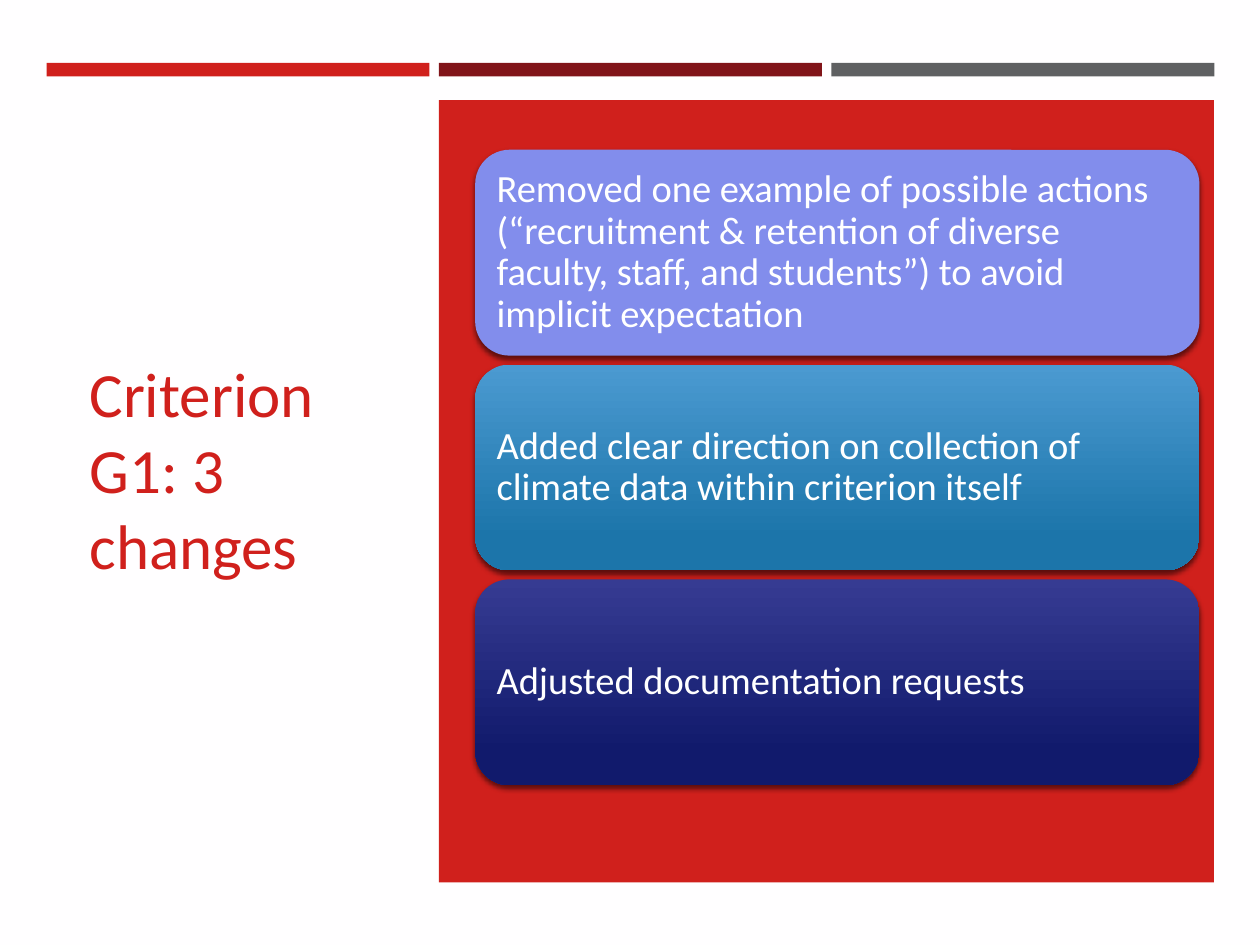
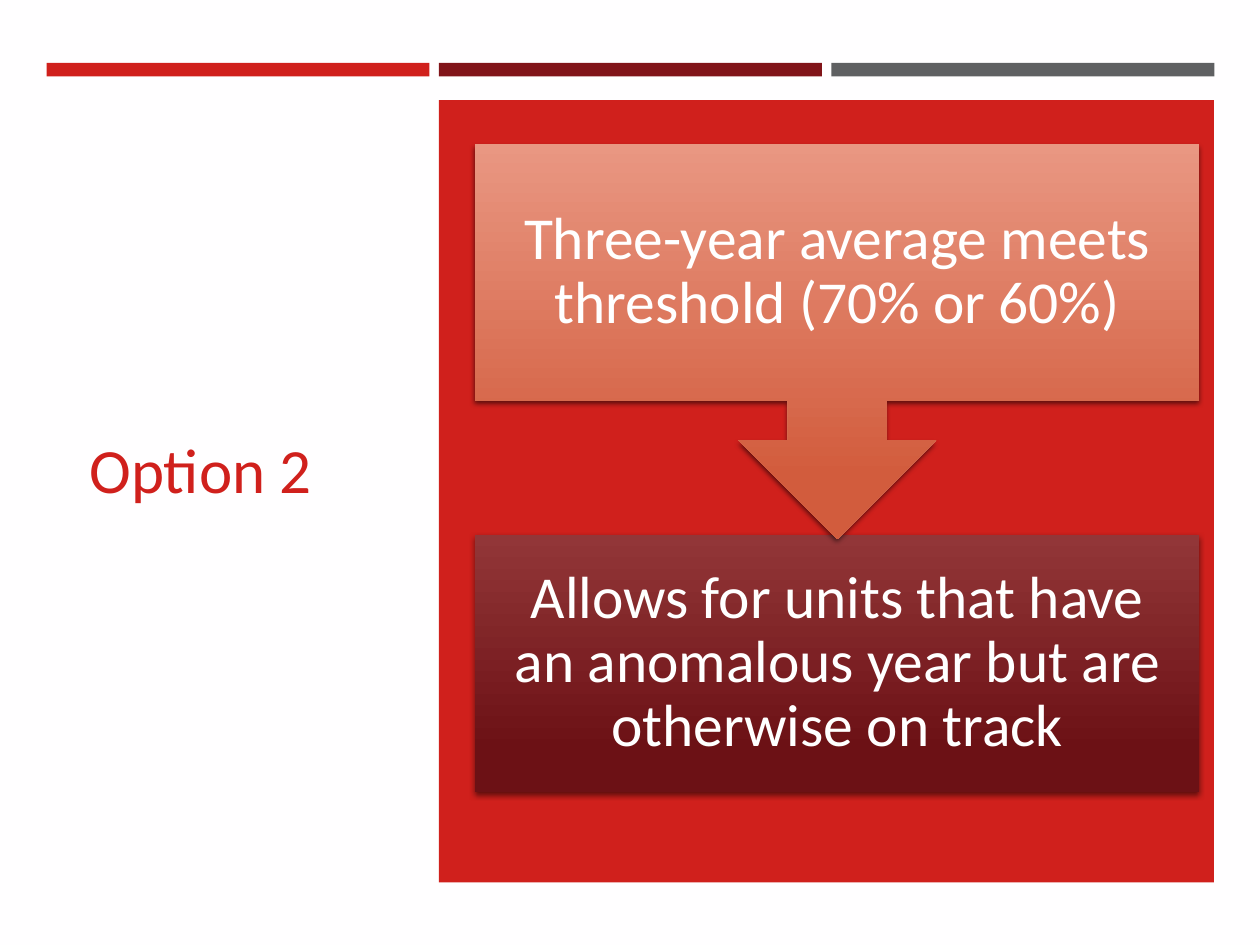
from lxml import etree
from pptx import Presentation
from pptx import util as u
from pptx.dml.color import RGBColor
from pptx.enum import shapes, text
from pptx.oxml import ns

FONT = "Calibri"
RED, MAROON, GREY = "D0201C", "811419", "5F6062"
PAPER, WHITE = "FFFEFF", "FFFFFF"

BAR_LEFT, BAR_TOP, BAR_WIDTH, BAR_HEIGHT, BAR_STEP = 0.94, 1.27, 7.72, 0.27, 7.91
PANEL = (BAR_LEFT + BAR_STEP, 2.02, 15.62, 15.77)
TITLE = (1.55, 2.9, 6.35, 13.08)
CONTENT_LEFT, CONTENT_WIDTH = 9.58, 14.6


def color(hex_code):
    return RGBColor.from_string(hex_code)


def write(shape, words, size, hex_code=WHITE, align=text.PP_ALIGN.LEFT,
          spacing=None, inset=None):
    frame = shape.text_frame
    frame.word_wrap = True
    frame.auto_size = text.MSO_AUTO_SIZE.NONE
    frame.vertical_anchor = text.MSO_ANCHOR.MIDDLE
    if inset is not None:
        frame.margin_left = frame.margin_right = u.Cm(inset)
        frame.margin_top = frame.margin_bottom = u.Cm(inset)
    para = frame.paragraphs[0]
    para.alignment = align
    para.line_spacing = spacing
    span = para.add_run()
    span.text = words
    span.font.name = FONT
    span.font.size = u.Pt(size)
    span.font.color.rgb = color(hex_code)


def add_block(page, kind, place, *fills):
    """Add a borderless shape; two fills make a top-to-bottom gradient."""
    block = page.shapes.add_shape(kind, *map(u.Cm, place))
    block.shadow.inherit = False
    block.line.fill.background()
    if len(fills) == 1:
        block.fill.solid()
        block.fill.fore_color.rgb = color(fills[0])
    else:
        block.fill.gradient()
        block.fill.gradient_angle = 270
        for stop, position, hex_code in zip(block.fill.gradient_stops, (0, 0.84), fills):
            stop.position = position
            stop.color.rgb = color(hex_code)
    return block


def add_shadow(block):
    effects = block._element.spPr.find(ns.qn("a:effectLst"))
    shadow = etree.SubElement(effects, ns.qn("a:outerShdw"), blurRad=str(u.Pt(3)),
                              dist=str(u.Pt(2)), dir="5400000", rotWithShape="0")
    tint = etree.SubElement(shadow, ns.qn("a:srgbClr"), val="000000")
    etree.SubElement(tint, ns.qn("a:alpha"), val="55000")


def add_card(page, kind, top, height, fills, words, **text_format):
    card = add_block(page, kind, (CONTENT_LEFT, top, CONTENT_WIDTH, height), *fills)
    add_shadow(card)
    write(card, words, spacing=0.9, **text_format)


def add_page(deck, heading):
    """Add a slide with the title, the three bars and the red panel."""
    page = deck.slides.add_slide(deck.slide_layouts.get_by_name("Title Only"))
    page.background.fill.solid()
    page.background.fill.fore_color.rgb = color(PAPER)
    title = page.shapes.title
    title.left, title.top, title.width, title.height = map(u.Cm, TITLE)
    write(title, heading, 36, RED)
    for index, bar_color in enumerate((RED, MAROON, GREY)):
        place = (BAR_LEFT + index * BAR_STEP, BAR_TOP, BAR_WIDTH, BAR_HEIGHT)
        add_block(page, shapes.MSO_SHAPE.RECTANGLE, place, bar_color)
    add_block(page, shapes.MSO_SHAPE.RECTANGLE, PANEL, RED)
    return page


def add_changes_page(deck):
    page = add_page(deck, "Criterion G1: 3 changes")
    changes = (
        ("Removed one example of possible actions (“recruitment & retention of "
         "diverse faculty, staff, and students”) to avoid implicit expectation",
         ("828DEC",)),
        ("Added clear direction on collection of climate data within criterion itself",
         ("4B9AD1", "1C75AA")),
        ("Adjusted documentation requests", ("363B92", "111A6C")),
    )
    for index, (words, fills) in enumerate(changes):
        add_card(page, shapes.MSO_SHAPE.ROUNDED_RECTANGLE, 3.02 + index * 4.33, 4.15,
                 fills, words, size=22, inset=0.23)


def add_option_page(deck):
    page = add_page(deck, "Option 2")
    text_format = {"size": 34, "inset": 0.66, "align": text.PP_ALIGN.CENTER}
    add_card(page, shapes.MSO_SHAPE.RECTANGLE, 10.78, 5.18, ("923638", "6C1115"),
             "Allows for units that have an anomalous year but are otherwise on track",
             **text_format)
    add_card(page, shapes.MSO_SHAPE.DOWN_ARROW_CALLOUT, 2.9, 7.97, ("E99782", "D25C3D"),
             "Three-year average meets threshold (70% or 60%)", **text_format)


def main():
    deck = Presentation()
    deck.slide_width, deck.slide_height = u.Cm(25.4), u.Cm(19.05)
    add_changes_page(deck)
    add_option_page(deck)
    deck.save("out.pptx")


if __name__ == "__main__":
    main()
